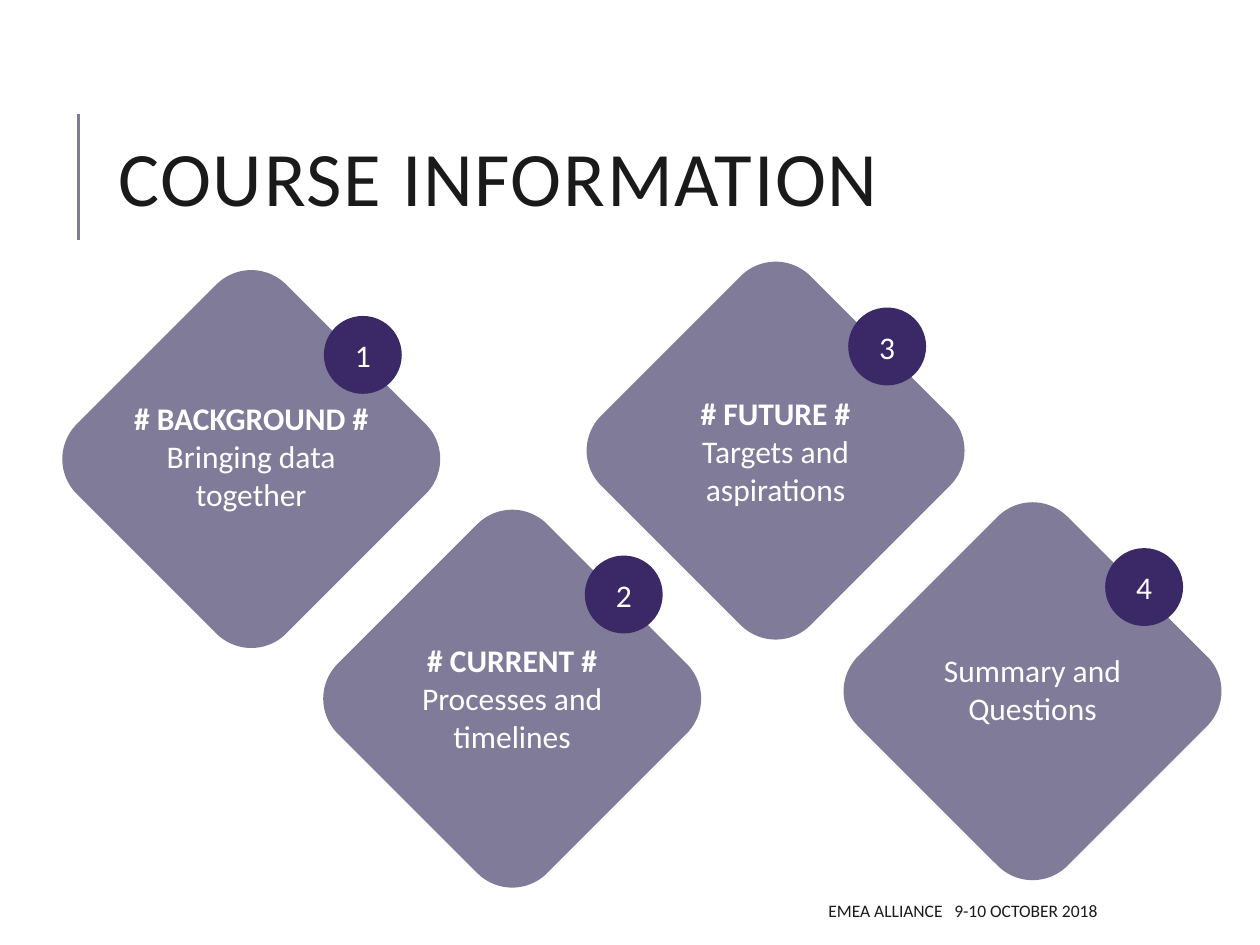
"""Build the course information slide with four numbered diamonds."""
from lxml import etree
from pptx import Presentation
from pptx.dml.color import RGBColor
from pptx.enum.shapes import MSO_CONNECTOR, MSO_SHAPE
from pptx.enum.text import MSO_ANCHOR, MSO_AUTO_SIZE, PP_ALIGN
from pptx.oxml.ns import qn
from pptx.util import Cm, Pt

STRAIGHT = MSO_CONNECTOR.STRAIGHT
ROUNDED, OVAL = MSO_SHAPE.ROUNDED_RECTANGLE, MSO_SHAPE.OVAL
TOP, MIDDLE = MSO_ANCHOR.TOP, MSO_ANCHOR.MIDDLE
LEFT, CENTER, RIGHT = PP_ALIGN.LEFT, PP_ALIGN.CENTER, PP_ALIGN.RIGHT
NO_FIT, GROW = MSO_AUTO_SIZE.NONE, MSO_AUTO_SIZE.SHAPE_TO_FIT_TEXT
LILAC = RGBColor(0x7F, 0x7B, 0x99)
PURPLE = RGBColor(0x3B, 0x28, 0x67)
INK = RGBColor(0x1A, 0x1A, 0x1A)
WHITE = RGBColor(0xFF, 0xFF, 0xFF)
DIAMOND_SIZE, BADGE_SIZE = 5.97, 1.57
TOPICS = [
    (2.08, 6.27, 7.92, 5.72, "# BACKGROUND #", "Bringing data together"),
    (7.34, 11.1, 12.8, 5.72, "# CURRENT #", "Processes and timelines"),
    (12.65, 6.1, 7.82, 6.1, "# FUTURE #", "Targets and aspirations"),
    (17.83, 10.95, 13, 5.72, "", "Summary and Questions"),
]


def add_text(paragraph, text, size=18, color=WHITE, bold=False, align=CENTER, spacing=0):
    paragraph.alignment = align
    run = paragraph.add_run()
    run.text = text
    run.font.name = "Calibri"
    run.font.size = Pt(size)
    run.font.bold = bold
    run.font.color.rgb = color
    if spacing:
        run.font._element.set("spc", str(round(spacing * 100)))


def add_filled(shapes, preset, left, top, size, color):
    shape = shapes.add_shape(preset, Cm(left), Cm(top), Cm(size), Cm(size))
    shape.shadow.inherit = False
    shape.fill.solid()
    shape.fill.fore_color.rgb = color
    shape.line.fill.background()
    return shape


presentation = Presentation()
presentation.slide_width, presentation.slide_height = Cm(25.4), Cm(19.05)
slide = presentation.slides.add_slide(presentation.slide_layouts[5])
shapes = slide.shapes

rule = shapes.add_connector(STRAIGHT, Cm(1.58), Cm(4.83), Cm(1.58), Cm(2.29))
rule.line.color.rgb = LILAC
rule.line.width = Pt(1.5)
etree.SubElement(rule._element.spPr, qn("a:effectLst"))

title = shapes.title
title.left, title.top, title.width, title.height = Cm(2.13), Cm(1.63), Cm(20.24), Cm(4.17)
title.text_frame.auto_size = NO_FIT
title.text_frame.vertical_anchor = MIDDLE
heading = title.text_frame.paragraphs[0]
heading.line_spacing = 0.8
add_text(heading, "COURSE INFORMATION", size=44, color=INK, align=LEFT, spacing=1)

for number, (left, top, text_top, text_width, topic, detail) in enumerate(TOPICS, 1):
    diamond = add_filled(shapes, ROUNDED, left, top, DIAMOND_SIZE, LILAC)
    diamond.rotation = 45

    badge = add_filled(shapes, OVAL, left + 4.45, top + 0.1, BADGE_SIZE, PURPLE)
    badge.text_frame.vertical_anchor = MIDDLE
    add_text(badge.text_frame.paragraphs[0], str(number))

    text_left = left + (DIAMOND_SIZE - text_width) / 2
    text_height = 2.57 if topic else 1.8
    label = shapes.add_textbox(Cm(text_left), Cm(text_top), Cm(text_width), Cm(text_height))
    frame = label.text_frame
    frame.word_wrap = True
    frame.auto_size = GROW
    frame.vertical_anchor = TOP
    paragraph = frame.paragraphs[0]
    if topic:
        add_text(paragraph, topic, bold=True)
        paragraph = frame.add_paragraph()
    add_text(paragraph, detail)

footer = shapes.add_textbox(Cm(10.08), Cm(17.98), Cm(12.29), Cm(0.76))
footer.text_frame.word_wrap = True
footer.text_frame.vertical_anchor = MIDDLE
footer_line = footer.text_frame.paragraphs[0]
for text, spacing in [("EMEA ALLIANCE", 0), (" ", 4.5), ("9-10 OCTOBER 2018", 0)]:
    add_text(footer_line, text, size=10, color=INK, align=RIGHT, spacing=spacing)

presentation.save("out.pptx")
